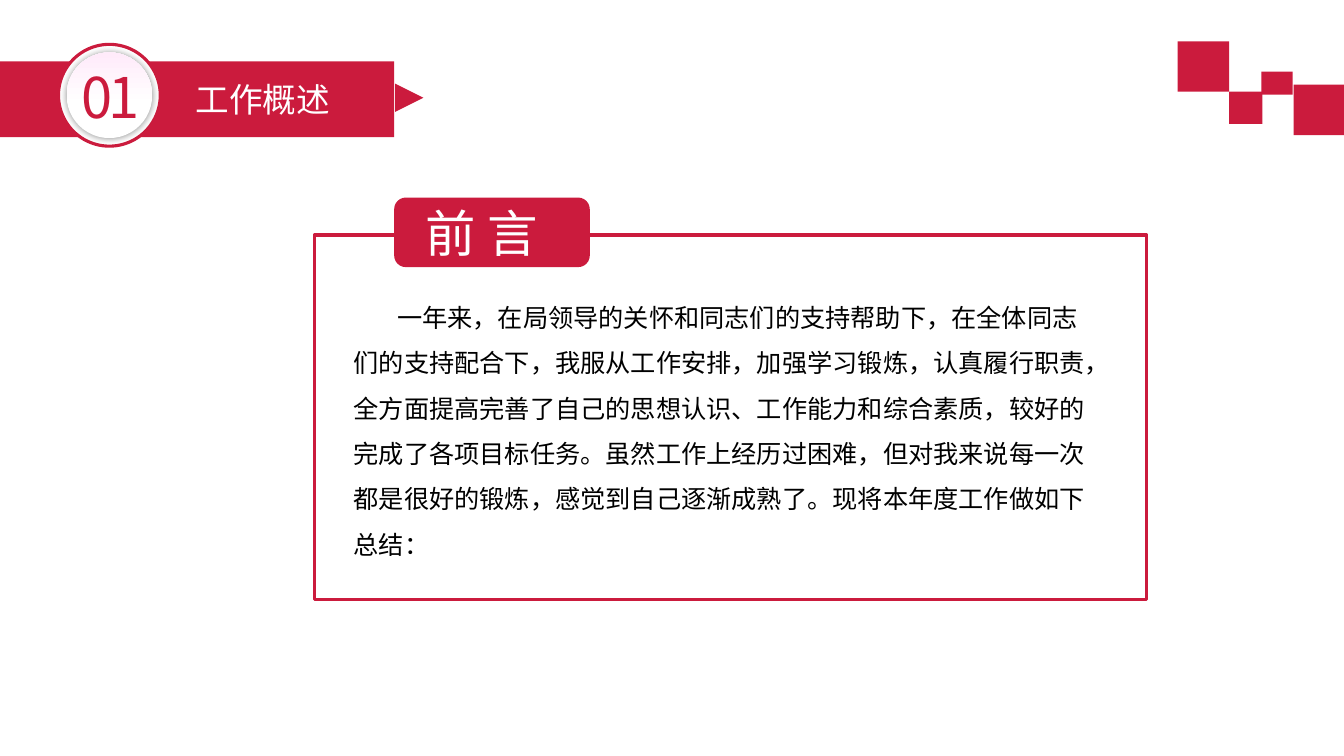
from dataclasses import dataclass

from pptx import Presentation
from pptx import util as u
from pptx.dml.color import RGBColor
from pptx.enum import shapes, text
from pptx.oxml import parse_xml
from pptx.oxml.ns import nsdecls, qn

KIND = shapes.MSO_SHAPE


@dataclass(frozen=True)
class Theme:
    font: str = "Noto Sans CJK SC"
    red: RGBColor = RGBColor(0xCB, 0x1B, 0x3D)
    white: RGBColor = RGBColor(0xFF, 0xFF, 0xFF)
    pink: RGBColor = RGBColor(0xFF, 0xEB, 0xFA)
    black: RGBColor = RGBColor(0, 0, 0)
    number_size: int = 40
    label_size: int = 36
    title_size: int = 24
    body_size: int = 18


THEME = Theme()
PREFACE = (
    "一年来，在局领导的关怀和同志们的支持帮助下，在全体同志们的支持配合下，"
    "我服从工作安排，加强学习锻炼，认真履行职责，全方面提高完善了自己的思想认识、"
    "工作能力和综合素质，较好的完成了各项目标任务。虽然工作上经历过困难，"
    "但对我来说每一次都是很好的锻炼，感觉到自己逐渐成熟了。现将本年度工作做如下总结："
)


def add_block(page, kind, left, top, width, height, fill=None, line=None, weight=0):
    """Add a flat shape; without a fill or line colour that part stays empty."""
    shape = page.shapes.add_shape(kind, *map(u.Inches, (left, top, width, height)))
    shape.shadow.inherit = False
    if fill is None:
        shape.fill.background()
    else:
        shape.fill.solid()
        shape.fill.fore_color.rgb = fill
    if line is None:
        shape.line.fill.background()
    else:
        shape.line.color.rgb = line
        shape.line.width = u.Pt(weight)
    return shape


def add_words(page, words, left, top, width, height, size, color):
    """Add a one-paragraph text box and return its paragraph and run."""
    box = page.shapes.add_textbox(*map(u.Inches, (left, top, width, height)))
    box.text_frame.word_wrap = True
    box.text_frame.vertical_anchor = text.MSO_ANCHOR.TOP
    para = box.text_frame.paragraphs[0]
    span = para.add_run()
    span.text = words
    span.font.size = u.Pt(size)
    span.font.name = THEME.font
    span.font.color.rgb = color
    span.font._element.append(
        parse_xml(f'<a:ea {nsdecls("a")} typeface="{THEME.font}"/>'))
    return para, span


def add_badge(page, left, top, size, number):
    """Draw the round section number with its softly shaded disc."""
    add_block(page, KIND.OVAL, left, top, size, size, THEME.white, THEME.red, 2.25)
    inset = 0.08
    disc = add_block(page, KIND.OVAL, left + inset, top + inset,
                     size - 2 * inset, size - 2 * inset)
    disc.fill.gradient()
    disc.fill.gradient_angle = 90
    for stop, position, color in zip(
            disc.fill.gradient_stops, (0.4, 1), (THEME.white, THEME.pink)):
        stop.position = position
        stop.color.rgb = color
    disc._element.spPr.find(qn("a:effectLst")).append(parse_xml(
        f'<a:outerShdw {nsdecls("a")} blurRad="{u.Pt(5)}" dist="0" dir="0">'
        '<a:srgbClr val="000000"><a:alpha val="40000"/></a:srgbClr></a:outerShdw>'))
    para, span = add_words(page, number, left + 0.13, top + 0.13, 0.97, 0.77,
                           THEME.number_size, THEME.red)
    span.font._element.set("spc", "-300")


def add_header(page, left, top, width, height, number, title):
    """Draw the section ribbon with its pointer, badge and title."""
    add_block(page, KIND.RECTANGLE, left, top, width, height, THEME.red)
    pointer = add_block(page, KIND.ISOSCELES_TRIANGLE, left + width + 0.01,
                        top + 0.22, 0.28, 0.28, THEME.red)
    pointer.rotation = 90
    add_badge(page, left + 0.61, top - 0.17, 1.01, number)
    add_words(page, title, left + 1.87, top + 0.12, 2.08, 0.5,
              THEME.title_size, THEME.white)


def add_corner_squares(page, left, top):
    for across, down, width, height in (
            (1.15, 0.43, 0.51, 0.5), (0, 0, 0.51, 0.5),
            (0.51, 0.5, 0.33, 0.32), (0.83, 0.3, 0.31, 0.23)):
        add_block(page, KIND.RECTANGLE, left + across, top + down,
                  width, height, THEME.red)


def add_preface(page, left, top, width, height, label, words):
    """Draw the framed passage with its label on the top edge."""
    add_block(page, KIND.RECTANGLE, left, top, width, height,
              line=THEME.red, weight=2.5)
    para, span = add_words(page, words, left + 0.29, top + 0.47, 7.6, 2.88,
                           THEME.body_size, THEME.black)
    para.line_spacing = 1.5
    para._p.get_or_add_pPr().set("indent", str(u.Inches(0.43)))
    add_block(page, KIND.ROUNDED_RECTANGLE, left + 0.79, top - 0.37,
              1.94, 0.69, THEME.red)
    add_words(page, label, left + 1, top - 0.37, 1.55, 0.84,
              THEME.label_size, THEME.white)


def main():
    deck = Presentation()
    deck.slide_width = u.Inches(13.33)
    deck.slide_height = u.Inches(7.5)
    page = deck.slides.add_slide(deck.slide_layouts[6])
    add_header(page, -0.03, 0.61, 3.94, 0.75, "01", "工作概述")
    add_corner_squares(page, 11.68, 0.41)
    add_preface(page, 3.12, 2.33, 8.25, 3.62, "前 言", PREFACE)
    deck.save("out.pptx")


if __name__ == "__main__":
    main()
